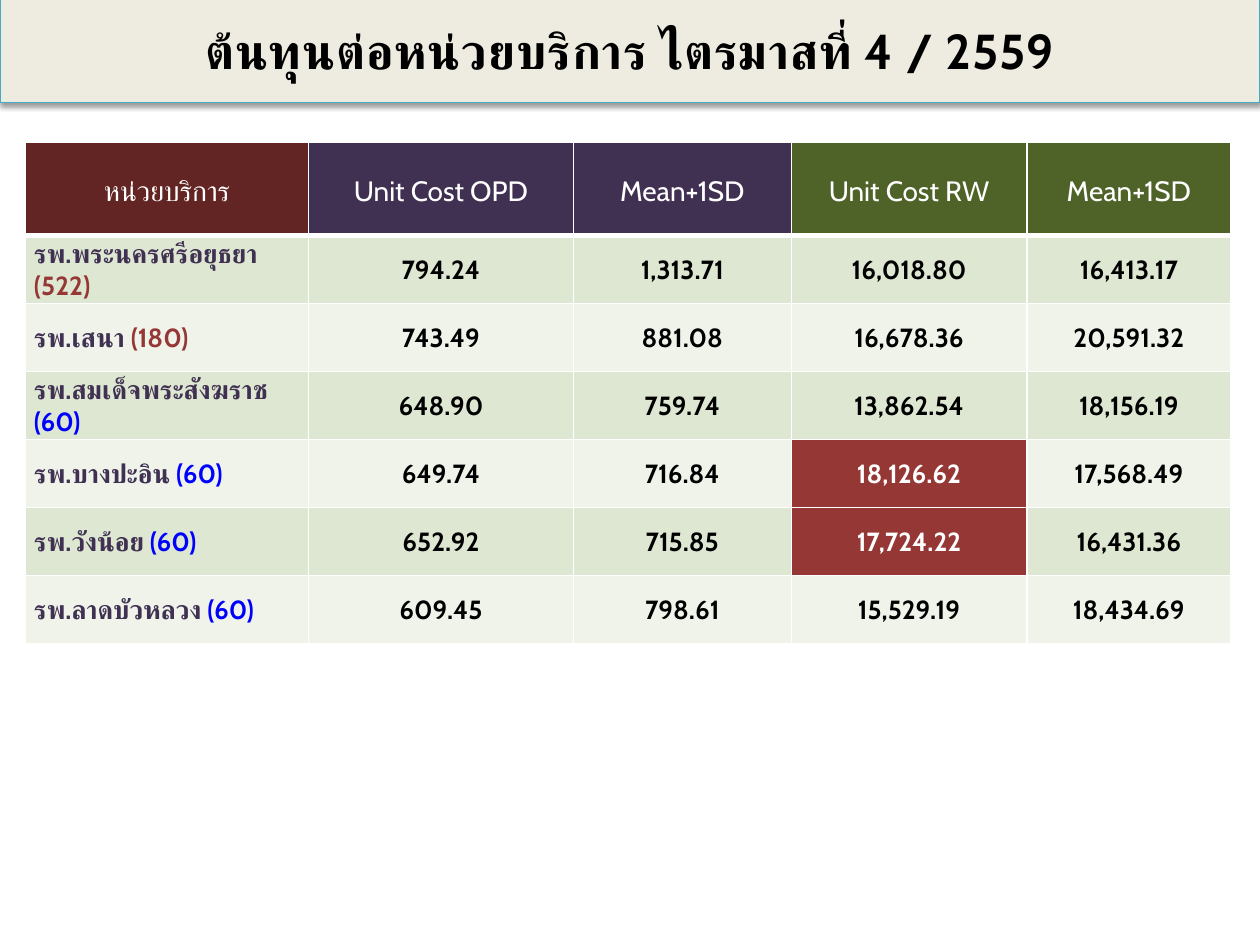
from lxml import etree
from pptx import Presentation
from pptx.dml.color import RGBColor
from pptx.enum.text import MSO_ANCHOR, MSO_AUTO_SIZE, PP_ALIGN
from pptx.oxml import parse_xml
from pptx.oxml.ns import nsdecls, qn
from pptx.util import Inches, Pt

MIDDLE = MSO_ANCHOR.MIDDLE
GROW = MSO_AUTO_SIZE.SHAPE_TO_FIT_TEXT
CENTER, LEFT = PP_ALIGN.CENTER, PP_ALIGN.LEFT

FONT = "Cabin"
BLACK = RGBColor(0x00, 0x00, 0x00)
WHITE = RGBColor(0xFF, 0xFF, 0xFF)
CREAM = RGBColor(0xEE, 0xEC, 0xE1)
TEAL = RGBColor(0x46, 0xAA, 0xC5)
MAROON = RGBColor(0x63, 0x25, 0x23)
PURPLE = RGBColor(0x40, 0x31, 0x52)
OLIVE = RGBColor(0x4F, 0x62, 0x28)
RED = RGBColor(0x95, 0x37, 0x35)
BLUE = RGBColor(0x00, 0x00, 0xFF)
BANDS = (RGBColor(0xDE, 0xE7, 0xD1), RGBColor(0xEF, 0xF3, 0xEA))

TITLE = "ต้นทุนต่อหน่วยบริการ ไตรมาสที่ 4 / 2559"
HEADERS = [
    ("หน่วยบริการ", MAROON),
    (" Unit Cost OPD ", PURPLE),
    ("Mean+1SD", PURPLE),
    (" Unit Cost RW ", OLIVE),
    ("Mean+1SD", OLIVE),
]
# Hospital, beds, OPD cost, OPD limit, RW cost, RW limit
HOSPITALS = [
    ("รพ.พระนครศรีอยุธยา", 522, 794.24, 1313.71, 16018.80, 16413.17),
    ("รพ.เสนา", 180, 743.49, 881.08, 16678.36, 20591.32),
    ("รพ.สมเด็จพระสังฆราช", 60, 648.90, 759.74, 13862.54, 18156.19),
    ("รพ.บางปะอิน", 60, 649.74, 716.84, 18126.62, 17568.49),
    ("รพ.วังน้อย", 60, 652.92, 715.85, 17724.22, 16431.36),
    ("รพ.ลาดบัวหลวง", 60, 609.45, 798.61, 15529.19, 18434.69),
]
COLUMN_WIDTHS = (2.25, 2.1, 1.73, 1.87, 1.62)
HEADER_HEIGHT, ROW_HEIGHT = 0.74, 0.54
LARGE_HOSPITAL_BEDS = 100


def add_span(para, text, size, color, bold):
    span = para.add_run()
    span.text = text
    font = span.font
    font.name, font.size, font.bold = FONT, Pt(size), bold
    font.color.rgb = color
    etree.SubElement(font._element, qn("a:cs"), typeface=FONT)
    return span


def add_title(page, left, top, width, height):
    box = page.shapes.title
    box.left, box.top, box.width, box.height = map(Inches, (left, top, width, height))
    box.fill.solid()
    box.fill.fore_color.rgb = CREAM
    box.line.color.rgb = TEAL
    box.line.width = Pt(0.75)
    box._element.spPr.append(parse_xml(
        f'<a:effectLst {nsdecls("a")}>'
        '<a:outerShdw blurRad="40000" dist="20000" dir="5400000" rotWithShape="0">'
        '<a:srgbClr val="000000"><a:alpha val="38000"/></a:srgbClr>'
        '</a:outerShdw></a:effectLst>'))
    frame = box.text_frame
    frame.word_wrap = True
    frame.auto_size = GROW
    frame.vertical_anchor = MIDDLE
    para = frame.paragraphs[0]
    para.alignment = CENTER
    span = add_span(para, TITLE, 28, BLACK, True)
    span.font._element.set("spc", "50")


def add_header_borders(cell):
    properties = cell._tc.get_or_add_tcPr()
    for side, width in (("L", 1), ("R", 1), ("T", 1), ("B", 3)):
        properties.append(parse_xml(
            f'<a:ln{side} {nsdecls("a")} w="{Pt(width)}"><a:solidFill>'
            f'<a:srgbClr val="{WHITE}"/></a:solidFill></a:ln{side}>'))


def format_cell(cell, fill, alignment=CENTER):
    """Set the cell's fill and margins and return its paragraph."""
    cell.fill.solid()
    cell.fill.fore_color.rgb = fill
    cell.vertical_anchor = MIDDLE
    cell.margin_left = cell.margin_right = Inches(0.07)
    cell.margin_top = cell.margin_bottom = 0
    para = cell.text_frame.paragraphs[0]
    para.alignment = alignment
    return para


def add_cost_table(page, left, top):
    height = HEADER_HEIGHT + ROW_HEIGHT * len(HOSPITALS)
    table = page.shapes.add_table(
        len(HOSPITALS) + 1, len(HEADERS), Inches(left), Inches(top),
        Inches(sum(COLUMN_WIDTHS)), Inches(height)).table
    for column, width in zip(table.columns, COLUMN_WIDTHS):
        column.width = Inches(width)
    for index, row in enumerate(table.rows):
        row.height = Inches(ROW_HEIGHT if index else HEADER_HEIGHT)

    for column, (label, fill) in enumerate(HEADERS):
        cell = table.cell(0, column)
        add_header_borders(cell)
        para = format_cell(cell, fill)
        para.line_spacing = 1.15
        add_span(para, label, 16, WHITE, False)

    for row, (name, beds, *costs) in enumerate(HOSPITALS, start=1):
        band = BANDS[(row - 1) % 2]
        para = format_cell(table.cell(row, 0), band, LEFT)
        add_span(para, f"{name} ", 15, PURPLE, True)
        beds_color = RED if beds > LARGE_HOSPITAL_BEDS else BLUE
        add_span(para, f"({beds})", 15, beds_color, True)
        for column, cost in enumerate(costs, start=1):
            # A unit cost above the limit in the next column is highlighted
            over_limit = column % 2 == 1 and cost > costs[column]
            para = format_cell(table.cell(row, column), RED if over_limit else band)
            add_span(para, f"{cost:,.2f}", 15, WHITE if over_limit else BLACK, True)


def main():
    deck = Presentation()
    deck.slide_width, deck.slide_height = Inches(10), Inches(7.5)
    page = deck.slides.add_slide(deck.slide_layouts[5])
    add_title(page, 0, 0.11, 10, 0.57)
    add_cost_table(page, 0.2, 1.13)
    deck.save("out.pptx")


if __name__ == "__main__":
    main()
